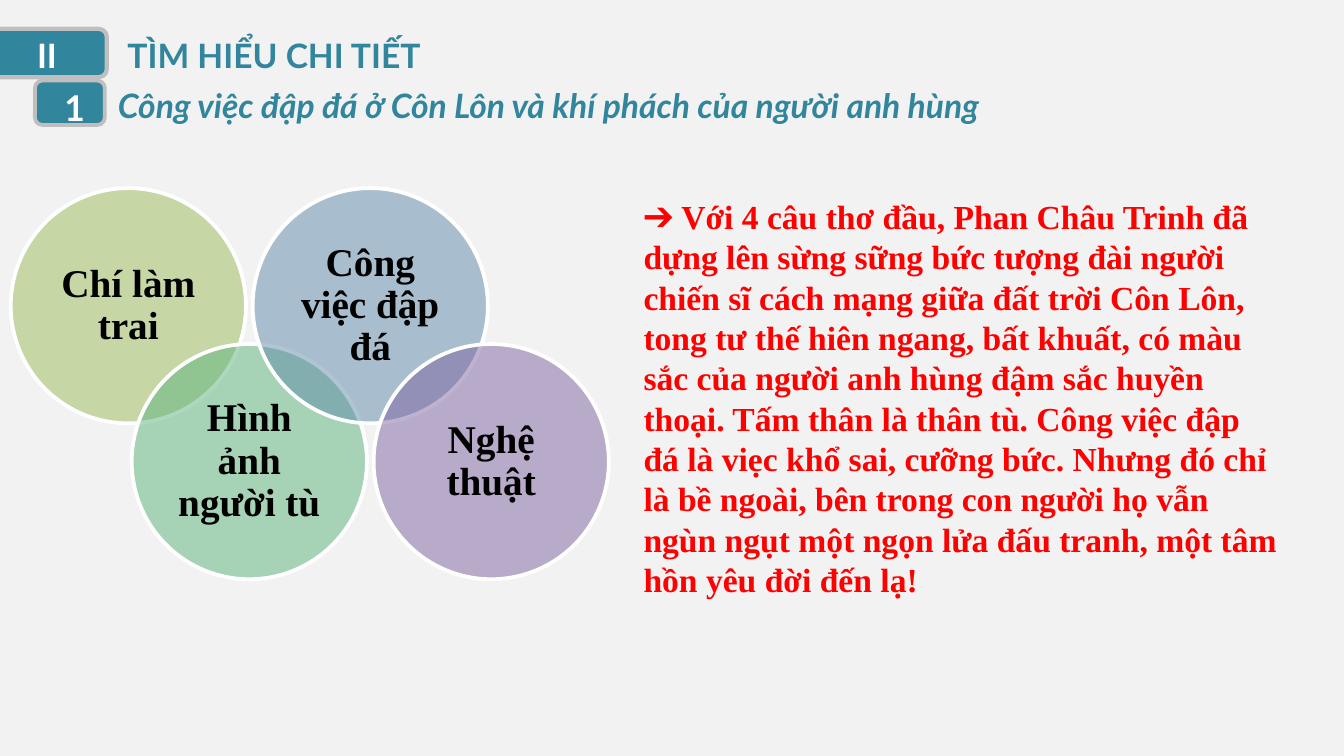
from lxml.etree import SubElement
from pptx import Presentation
from pptx.dml.color import RGBColor
from pptx.enum.shapes import MSO_SHAPE
from pptx.enum.text import MSO_ANCHOR, MSO_AUTO_SIZE, PP_ALIGN
from pptx.oxml.ns import qn
from pptx.util import Inches, Pt

COLORS = {
    "background": "F2F2F2", "teal": "31859C", "border": "BFBFBF",
    "white": "FFFFFF", "black": "000000", "red": "FF0000",
    "olive": "9BBB59", "green": "5CB37C", "blue": "608CAB", "purple": "8064A2",
}


def add_filled_shape(kind, left, top, width, height, fill, line, line_width):
    shape = slide.shapes.add_shape(
        kind, Inches(left), Inches(top), Inches(width), Inches(height))
    shape.shadow.inherit = False
    shape.fill.solid()
    shape.fill.fore_color.rgb = RGBColor.from_string(COLORS[fill])
    shape.line.color.rgb = RGBColor.from_string(COLORS[line])
    shape.line.width = Pt(line_width)
    return shape


def write_text(shape, text, size, font, color, align=PP_ALIGN.LEFT, italic=False):
    paragraph = shape.text_frame.paragraphs[0]
    paragraph.alignment = align
    run = paragraph.add_run()
    run.text = text
    run.font.name = font
    run.font.size = Pt(size)
    run.font.bold = True
    run.font.italic = italic
    run.font.color.rgb = RGBColor.from_string(COLORS[color])
    return paragraph


# Widescreen 16:9 slide
presentation = Presentation()
presentation.slide_width = Inches(10)
presentation.slide_height = Inches(10 * 9 / 16)
slide = presentation.slides.add_slide(presentation.slide_layouts[6])
slide.background.fill.solid()
slide.background.fill.fore_color.rgb = RGBColor.from_string(COLORS["background"])

# Section tab, turned so its rounded end points right, and number badge
section_tab = add_filled_shape(MSO_SHAPE.ROUND_2_SAME_RECTANGLE,
                               0.18, -0.04, 0.36, 0.87, "teal", "border", 2.25)
section_tab.rotation = 90
add_filled_shape(MSO_SHAPE.ROUNDED_RECTANGLE,
                 0.26, 0.6, 0.52, 0.33, "teal", "border", 2)

# Headings and commentary
conclusion = (
    "➔ Với 4 câu thơ đầu, Phan Châu Trinh đã dựng lên sừng sững bức tượng đài "
    "người chiến sĩ cách mạng giữa đất trời Côn Lôn, tong tư thế hiên ngang, "
    "bất khuất, có màu sắc của người anh hùng đậm sắc huyền thoại. Tấm thân là "
    "thân tù. Công việc đập đá là viẹc khổ sai, cưỡng bức. Nhưng đó chỉ là bề "
    "ngoài, bên trong con người họ vẫn ngùn ngụt một ngọn lửa đấu tranh, một "
    "tâm hồn yêu đời đến lạ!"
)
text_boxes = [
    # left, top, width, height, text, size, font, color, align, italic, wrap
    (0, 0.21, 0.7, 0.4, "II", 18, "Lato", "white", PP_ALIGN.CENTER, False, True),
    (0.85, 0.21, 2.81, 0.4, "TÌM HIỂU CHI TIẾT",
     18, "Lato", "teal", PP_ALIGN.LEFT, False, True),
    (0.78, 0.58, 8.24, 0.4, "Công việc đập đá ở Côn Lôn và khí phách của người anh hùng",
     18, "Lato", "teal", PP_ALIGN.LEFT, True, True),
    (0.37, 0.59, 0.37, 0.42, "1", 19, "Lato", "white", PP_ALIGN.CENTER, False, False),
    (4.69, 1.41, 4.96, 3.13, conclusion,
     18, "Times New Roman", "red", PP_ALIGN.LEFT, False, True),
]
for left, top, width, height, text, size, font, color, align, italic, wrap in text_boxes:
    text_box = slide.shapes.add_textbox(
        Inches(left), Inches(top), Inches(width), Inches(height))
    text_box.text_frame.word_wrap = wrap
    text_box.text_frame.auto_size = MSO_AUTO_SIZE.SHAPE_TO_FIT_TEXT
    write_text(text_box, text, size, font, color, align, italic)

# Chain of half-transparent circles, alternating between two rows
circles = [("Chí làm trai", "olive"), ("Hình ảnh người tù", "green"),
           ("Công việc đập đá", "blue"), ("Nghệ thuật", "purple")]
for index, (label, color) in enumerate(circles):
    circle = add_filled_shape(MSO_SHAPE.OVAL, 0.08 + 0.9 * index,
                              1.4 + 1.16 * (index % 2), 1.75, 1.75, color, "white", 2)
    fill_color = circle.element.spPr.find(qn("a:solidFill"))[0]
    SubElement(fill_color, qn("a:alpha"), val="50000")
    frame = circle.text_frame
    frame.word_wrap = True
    frame.vertical_anchor = MSO_ANCHOR.MIDDLE
    frame.margin_left = frame.margin_right = Inches(0.08)
    frame.margin_top = frame.margin_bottom = Inches(0.08)
    paragraph = write_text(circle, label, 21, "Times New Roman", "black", PP_ALIGN.CENTER)
    paragraph.line_spacing = 0.9

presentation.save("out.pptx")
